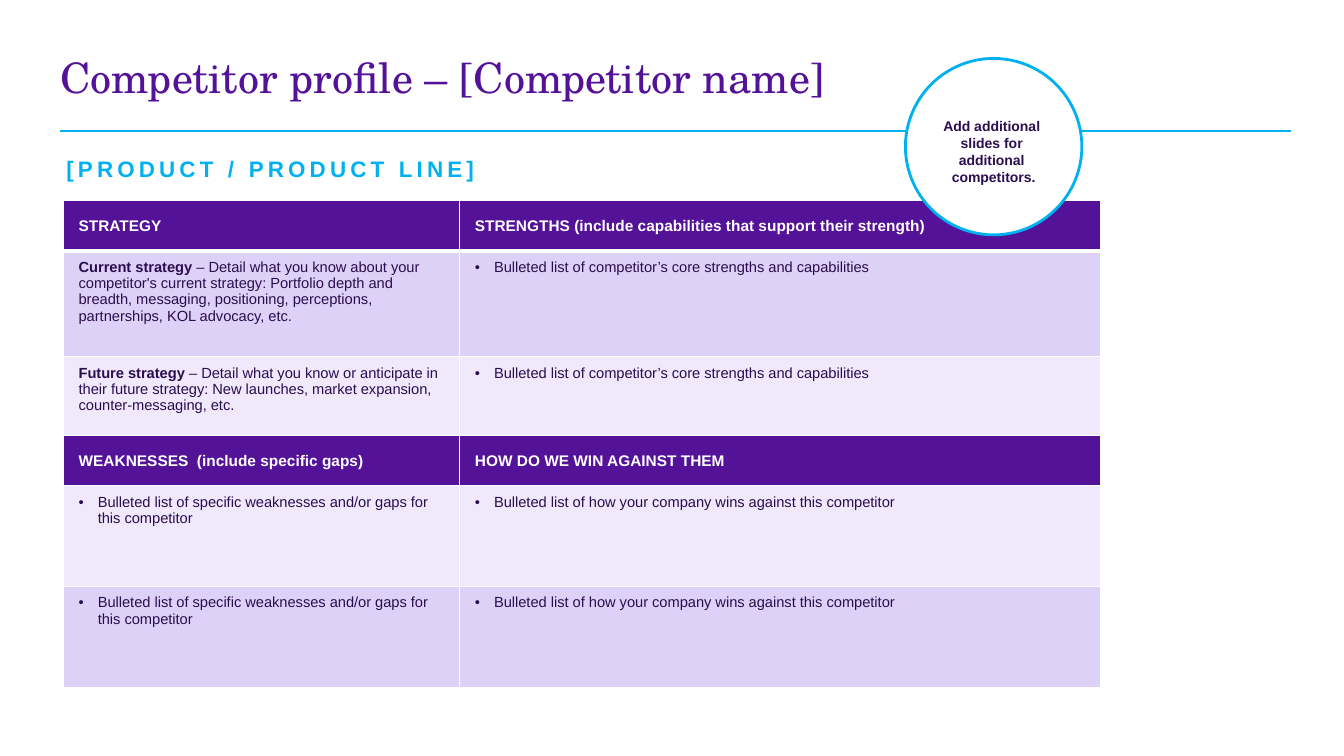
from dataclasses import dataclass
from typing import NamedTuple

from lxml import etree
from pptx import Presentation
from pptx.dml.color import RGBColor as Rgb
from pptx.enum.shapes import MSO_CONNECTOR as Conn, MSO_SHAPE as Geo
from pptx.enum.text import MSO_ANCHOR as Anchor, PP_ALIGN as Align
from pptx.oxml.ns import qn
from pptx.util import Pt

SCALE = 9144


@dataclass(frozen=True)
class Theme:
    plum: str = "541299"
    ink: str = "2B0E4F"
    sky: str = "00B0F0"
    white: str = "FFFFFF"
    mid: str = "DED1F8"
    pale: str = "EFE9FB"
    serif: str = "TeX Gyre Schola"
    sans: str = "Arial"
    title: float = 30
    sub: float = 16
    head: float = 11
    body: float = 10.5
    note: float = 10


THEME = Theme()


class Box(NamedTuple):
    left: int
    top: int
    width: int
    height: int

    def emu(self) -> list[int]:
        return [px(n) for n in self]


class Style(NamedTuple):
    size: float
    color: str
    bold: bool = False
    font: str = THEME.sans
    space: int = 0


class Row(NamedTuple):
    height: int
    fill: str
    left: str
    right: str
    lead: str = ""

    @property
    def head(self) -> bool:
        return self.fill == THEME.plum


STRONG = "Bulleted list of competitor’s core strengths and capabilities"
WEAK = "Bulleted list of specific weaknesses and/or gaps for this competitor"
WIN = "Bulleted list of how your company wins against this competitor"
COLS = (393, 636)
ROWS = (
    Row(50, THEME.plum, "STRATEGY",
        "STRENGTHS (include capabilities that support their strength)"),
    Row(105, THEME.mid,
        " – Detail what you know about your competitor's current strategy: "
        "Portfolio depth and breadth, messaging, positioning, perceptions, "
        "partnerships, KOL advocacy, etc.", STRONG, "Current strategy"),
    Row(78, THEME.pale,
        " – Detail what you know or anticipate in their future strategy: "
        "New launches, market expansion, counter-messaging, etc.",
        STRONG, "Future strategy"),
    Row(50, THEME.plum, "WEAKNESSES  (include specific gaps)",
        "HOW DO WE WIN AGAINST THEM"),
    Row(100, THEME.pale, WEAK, WIN),
    Row(100, THEME.mid, WEAK, WIN),
)
NOTE = ("Add additional ", "slides for ", "additional ", "competitors.")


def px(n: int) -> int:
    return n * SCALE


def hue(code: str) -> Rgb:
    return Rgb.from_string(code)


def add_run(para, text: str, style: Style) -> None:
    run = para.add_run()
    run.text = text
    font = run.font
    font.size, font.bold, font.name = Pt(style.size), style.bold, style.font
    font.color.rgb = hue(style.color)
    if style.space:
        run._r.get_or_add_rPr().set("spc", str(style.space * 100))


def add_text(group, box: Box, lines: tuple[str, ...], style: Style,
             align: Align) -> None:
    frame = group.add_textbox(*box.emu()).text_frame
    frame.word_wrap = True
    for i, line in enumerate(lines):
        para = frame.add_paragraph() if i else frame.paragraphs[0]
        para.alignment = align
        add_run(para, line, style)


def add_title(slide, box: Box, text: str) -> None:
    title = slide.shapes.title
    title.left, title.top, title.width, title.height = box.emu()
    frame = title.text_frame
    frame.word_wrap, frame.vertical_anchor = True, Anchor.MIDDLE
    para = frame.paragraphs[0]
    para.alignment, para.line_spacing = Align.LEFT, 0.9
    add_run(para, text, Style(THEME.title, THEME.plum, font=THEME.serif))


def add_rule(slide, left: int, right: int, top: int) -> None:
    rule = slide.shapes.add_connector(
        Conn.STRAIGHT, px(left), px(top), px(right), px(top))
    rule.line.color.rgb, rule.line.width = hue(THEME.sky), Pt(1.5)
    etree.SubElement(rule._element.spPr, qn("a:effectLst"))


def set_edge(cell, row: int) -> None:
    props = cell._tc.get_or_add_tcPr()
    wide = {"T": 3 if row == 1 else 1, "B": 1 if row else 3}
    for i, side in enumerate("LRTB"):
        line = etree.Element(qn(f"a:ln{side}"), w=str(Pt(wide.get(side, 1))))
        fill = etree.SubElement(line, qn("a:solidFill"))
        etree.SubElement(fill, qn("a:srgbClr"), val=THEME.white)
        props.insert(i, line)


def set_bullet(para) -> None:
    props = para._p.get_or_add_pPr()
    props.set("marL", str(px(19)))
    props.set("indent", str(px(-19)))
    etree.SubElement(props, qn("a:buFont"), typeface=THEME.sans)
    etree.SubElement(props, qn("a:buChar"), char="•")


def fill_cell(cell, row: Row, text: str, lead: str) -> None:
    cell.fill.solid()
    cell.fill.fore_color.rgb = hue(row.fill)
    cell.margin_left, cell.margin_right = px(15), px(10)
    cell.margin_top, cell.margin_bottom = px(5 if row.head else 8), px(5)
    cell.vertical_anchor = Anchor.MIDDLE if row.head else Anchor.TOP
    para = cell.text_frame.paragraphs[0]
    if row.head:
        add_run(para, text, Style(THEME.head, THEME.white, True))
        return
    if lead:
        add_run(para, lead, Style(THEME.body, THEME.ink, True))
    else:
        set_bullet(para)
    add_run(para, text, Style(THEME.body, THEME.ink))


def add_grid(slide, left: int, top: int) -> None:
    box = Box(left, top, sum(COLS), sum(row.height for row in ROWS))
    grid = slide.shapes.add_table(len(ROWS), len(COLS), *box.emu()).table
    grid.first_row = grid.horz_banding = False
    for col, width in zip(grid.columns, COLS):
        col.width = px(width)
    for i, row in enumerate(ROWS):
        grid.rows[i].height = px(row.height)
        for j, (text, lead) in enumerate(
                ((row.left, row.lead), (row.right, ""))):
            cell = grid.cell(i, j)
            fill_cell(cell, row, text, lead)
            set_edge(cell, i)


def add_badge(slide) -> None:
    group = slide.shapes.add_group_shape().shapes
    disc = group.add_shape(Geo.OVAL, *Box(898, 58, 175, 175).emu())
    disc.shadow.inherit = False
    disc.fill.solid()
    disc.fill.fore_color.rgb = hue(THEME.white)
    disc.line.color.rgb, disc.line.width = hue(THEME.sky), Pt(2)
    add_text(group, Box(897, 112, 177, 77), NOTE,
             Style(THEME.note, THEME.ink, True), Align.CENTER)


def main() -> None:
    deck = Presentation()
    deck.slide_width, deck.slide_height = px(1333), px(750)
    slide = deck.slides.add_slide(deck.slide_layouts[5])
    add_title(slide, Box(50, 36, 837, 87),
              "Competitor profile – [Competitor name]")
    add_grid(slide, 63, 199)
    add_rule(slide, 60, 1280, 130)
    add_badge(slide)
    add_text(slide.shapes, Box(56, 149, 470, 37),
             ("[PRODUCT / PRODUCT LINE]",),
             Style(THEME.sub, THEME.sky, True, space=3), Align.LEFT)
    deck.save("out.pptx")


if __name__ == "__main__":
    main()
